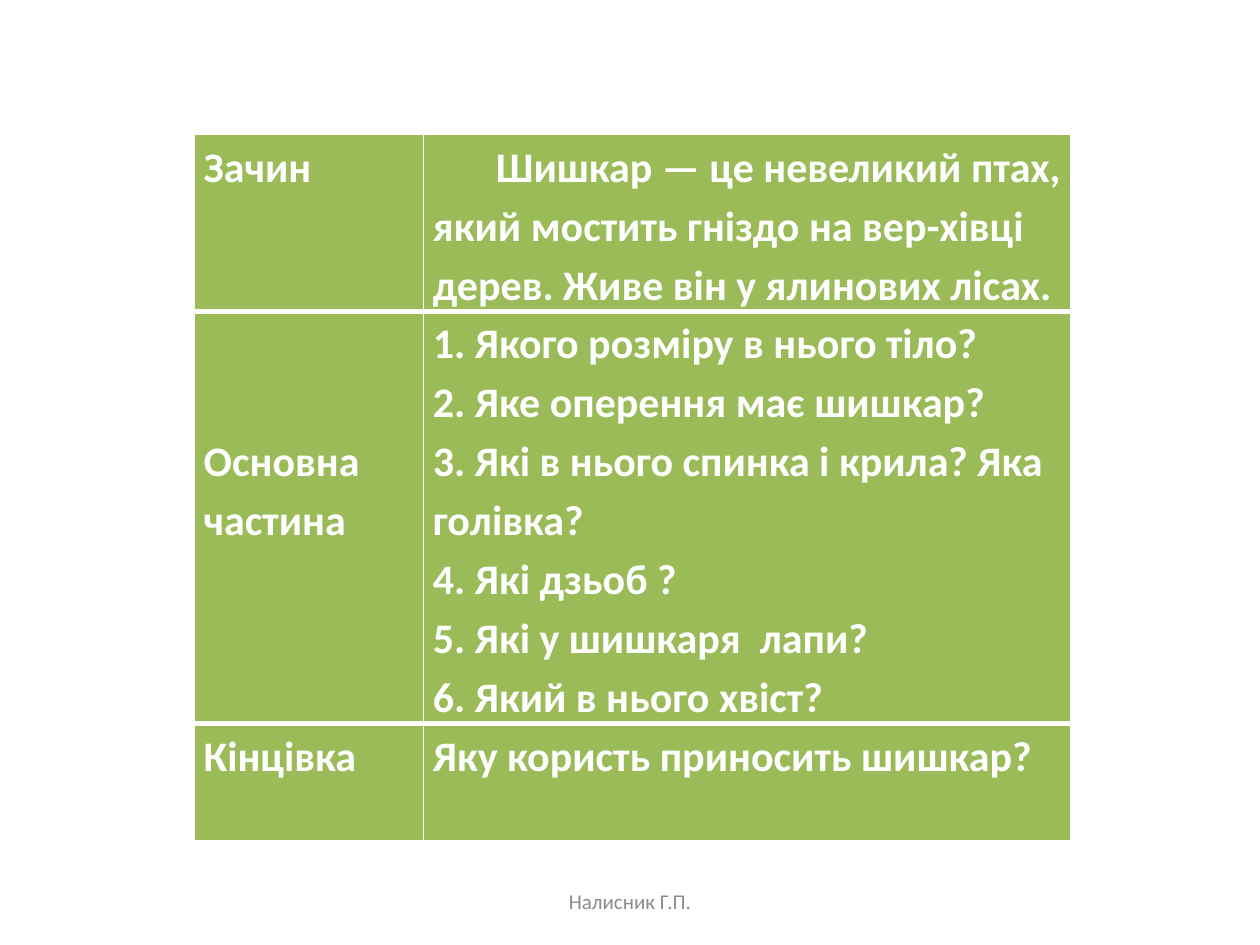
from lxml import etree
from pptx import Presentation
from pptx.dml.color import RGBColor
from pptx.enum.text import MSO_ANCHOR, PP_ALIGN
from pptx.oxml.ns import qn
from pptx.util import Pt

LEFT, CENTER, JUSTIFY = PP_ALIGN.LEFT, PP_ALIGN.CENTER, PP_ALIGN.JUSTIFY
MIDDLE = MSO_ANCHOR.MIDDLE
COLORS = {"green": "9BBB59", "white": "FFFFFF", "gray": "8C8C8C"}
FONT = "Calibri"
LINE_HEIGHT = 33.6
COLUMN_WIDTHS = (131, 370)
ROW_LINES = (3, 7, 2)
PLAN = (
    (["Зачин"],
     ["Шишкар — це невеликий птах, який мостить гніздо на вер-хівці дерев. "
      "Живе він у ялинових лісах."]),
    (["Основна частина"],
     ["1. Якого розміру в нього тіло?",
      "2. Яке оперення має шишкар?",
      "3. Які в нього спинка і крила? Яка голівка?",
      "4. Які дзьоб ?",
      "5. Які у шишкаря  лапи?",
      "6. Який в нього хвіст?"]),
    (["Кінцівка"], ["Яку користь приносить шишкар?"]),
)


def set_font(para, size, color, bold=False):
    para.font.name = FONT
    para.font.size = Pt(size)
    para.font.bold = bold
    para.font.color.rgb = RGBColor.from_string(COLORS[color])


def set_borders(cell, widths):
    properties = cell._tc.get_or_add_tcPr()
    for index, (side, width) in enumerate(widths.items()):
        line = etree.Element(qn(f"a:ln{side}"), w=str(Pt(width)))
        fill = etree.SubElement(line, qn("a:solidFill"))
        etree.SubElement(fill, qn("a:srgbClr"), val=COLORS["white"])
        properties.insert(index, line)


def fill_cell(cell, texts, align):
    cell.margin_left = cell.margin_right = Pt(5.4)
    cell.margin_top = cell.margin_bottom = 0
    cell.fill.solid()
    cell.fill.fore_color.rgb = RGBColor.from_string(COLORS["green"])
    frame = cell.text_frame
    for index, text in enumerate(texts):
        para = frame.add_paragraph() if index else frame.paragraphs[0]
        para.text = text
        para.alignment = align
        para.line_spacing = 1.15
        set_font(para, 24, "white", bold=True)


def add_plan_table(page, left, top, width, height):
    table = page.shapes.add_table(
        len(PLAN), len(COLUMN_WIDTHS), Pt(left), Pt(top), Pt(width), Pt(height)).table
    for column, column_width in zip(table.columns, COLUMN_WIDTHS):
        column.width = Pt(column_width)
    last = len(PLAN) - 1
    for row, (texts, lines) in enumerate(zip(PLAN, ROW_LINES)):
        table.rows[row].height = Pt(lines * LINE_HEIGHT)
        widths = {"L": 1, "R": 1, "T": 3 if row else 1, "B": 3 if row < last else 1}
        for column, paragraphs in enumerate(texts):
            cell = table.cell(row, column)
            fill_cell(cell, paragraphs, LEFT if column and row < last else JUSTIFY)
            set_borders(cell, widths)
    table.cell(1, 0).margin_top = Pt(2 * LINE_HEIGHT)
    opening = table.cell(0, 1).text_frame.paragraphs[0]
    opening._p.get_or_add_pPr().set("indent", str(Pt(36)))


def add_footer(page, left, top, width, height):
    box = page.shapes.add_textbox(Pt(left), Pt(top), Pt(width), Pt(height))
    frame = box.text_frame
    frame.word_wrap = True
    frame.vertical_anchor = MIDDLE
    para = frame.paragraphs[0]
    para.text = "Налисник Г.П."
    para.alignment = CENTER
    set_font(para, 12, "gray")


def main():
    deck = Presentation()
    deck.slide_width, deck.slide_height = Pt(720), Pt(540)
    page = deck.slides.add_slide(deck.slide_layouts[6])
    add_plan_table(page, 111, 77, sum(COLUMN_WIDTHS), sum(ROW_LINES) * LINE_HEIGHT)
    add_footer(page, 246, 500.5, 228, 28.75)
    deck.save("out.pptx")


if __name__ == "__main__":
    main()
